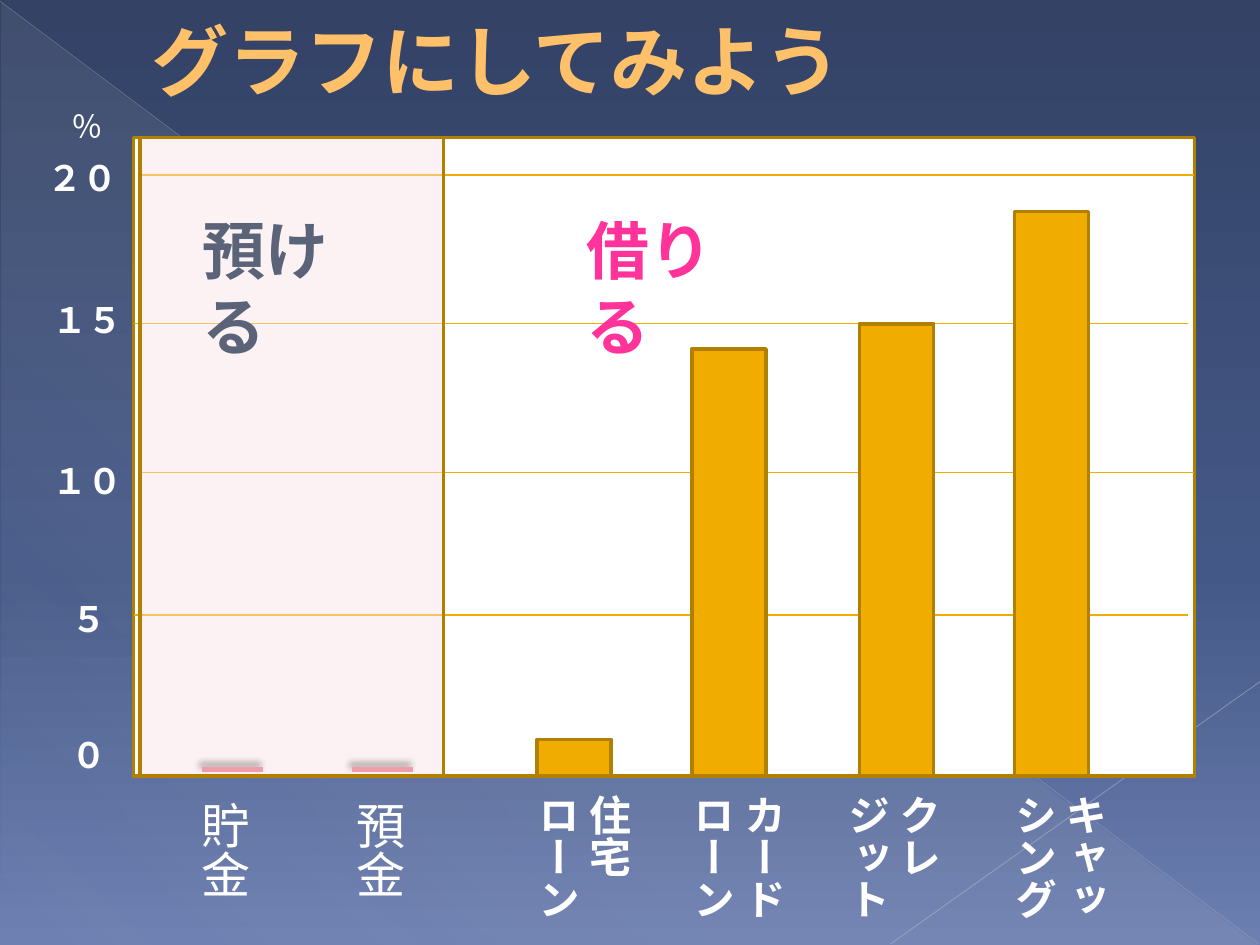
from lxml.etree import SubElement
from pptx import Presentation
from pptx.dml.color import RGBColor
from pptx.enum.shapes import MSO_CONNECTOR, MSO_SHAPE
from pptx.enum.text import MSO_ANCHOR, MSO_AUTO_SIZE, PP_ALIGN
from pptx.oxml.ns import qn
from pptx.util import Inches, Pt

COLORS = {
    "sky": "334265", "mid": "445887", "low": "6C7FB1", "haze": "D4D4D6",
    "ray": "B9BDC8", "ray2": "C1C4CE", "title": "FFC06A", "white": "FFFFFF",
    "gold": "F0AD00", "edge": "B28000", "rose": "E66C7D", "blush": "FAE2E5",
    "slate": "5A6378", "pink": "FF3399", "black": "000000",
}
JP = "Noto Sans CJK JP"
LATIN = "Quicksand"


def rgb(name):
    return RGBColor.from_string(COLORS[name])


def add_color(parent, name, alpha=100):
    node = SubElement(parent, qn("a:srgbClr"), val=COLORS[name])
    if alpha < 100:
        SubElement(node, qn("a:alpha"), val=str(alpha * 1000))


def set_alpha(shape, alpha):
    """Set the opacity of the first solid colour of a shape, in percent."""
    node = next(shape._element.spPr.iter(qn("a:srgbClr")))
    SubElement(node, qn("a:alpha"), val=str(alpha * 1000))


def set_grad(props, stops, angle):
    """Swap the solid fill in props for a gradient of (place, colour, alpha)."""
    old = props.find(qn("a:solidFill"))
    grad = SubElement(props, qn("a:gradFill"), rotWithShape="1")
    props.replace(old, grad)
    items = SubElement(grad, qn("a:gsLst"))
    for place, name, alpha in stops:
        stop = SubElement(items, qn("a:gs"), pos=str(place * 1000))
        add_color(stop, name, alpha)
    SubElement(grad, qn("a:lin"), ang=str(angle * 60000), scaled="0")


def add_box(slide, box, fill, edge="edge", kind=MSO_SHAPE.RECTANGLE):
    shape = slide.shapes.add_shape(kind, *map(Inches, box))
    shape.shadow.inherit = False
    shape.fill.solid()
    shape.fill.fore_color.rgb = rgb(fill)
    if edge:
        shape.line.color.rgb = rgb(edge)
        shape.line.width = Pt(2)
    else:
        shape.line.fill.background()
    return shape


def add_line(slide, ends, color, width, alpha=100, shade=False):
    line = slide.shapes.add_connector(MSO_CONNECTOR.STRAIGHT, *map(Inches, ends))
    line.line.color.rgb = rgb(color)
    line.line.width = Pt(width)
    if alpha < 100:
        set_alpha(line, alpha)
    effects = SubElement(line._element.spPr, qn("a:effectLst"))
    if shade:
        shadow = SubElement(effects, qn("a:outerShdw"), blurRad=str(Pt(4)),
                            dist=str(Pt(3)), dir=str(245 * 60000),
                            algn="ctr", rotWithShape="0")
        add_color(shadow, "black", 60)


def write(frame, text, size, color="white", bold=False, font=LATIN):
    for i, part in enumerate(text.split("\n")):
        para = frame.add_paragraph() if i else frame.paragraphs[0]
        run = para.add_run()
        run.text = part
        run.font.size = Pt(size)
        run.font.bold = bold
        run.font.name = font
        run.font.color.rgb = rgb(color)
        SubElement(run._r.get_or_add_rPr(), qn("a:ea"), typeface=font)


def add_text(slide, box, text, size, wrap=False, upright=False, **style):
    frame = slide.shapes.add_textbox(*map(Inches, box)).text_frame
    frame.word_wrap = wrap
    frame.auto_size = MSO_AUTO_SIZE.SHAPE_TO_FIT_TEXT
    if upright:
        frame._txBody.bodyPr.set("vert", "eaVert")
    write(frame, text, size, **style)


def add_back(slide):
    fill = slide.background.fill
    fill.solid()
    fill.fore_color.rgb = rgb("sky")
    props = slide._element.cSld.find(qn("p:bg")).find(qn("p:bgPr"))
    set_grad(props, [(0, "sky", 100), (60, "mid", 100), (100, "low", 100)], 90)
    haze = add_box(slide, (0.01, 0.02, 9.98, 7.48), "haze", None,
                   MSO_SHAPE.RIGHT_TRIANGLE)
    set_grad(haze._element.spPr,
             [(0, "haze", 10), (70, "haze", 8), (100, "haze", 1)], 133)
    add_line(slide, (0, 0.01, 9.99, 7.49), "ray", 0.39, alpha=35)
    add_line(slide, (10, 5.41, 7.07, 7.49), "ray2", 0.47, alpha=45)


def add_title(slide, box, text):
    title = slide.shapes.title
    title.left, title.top, title.width, title.height = map(Inches, box)
    slide.shapes._spTree.append(title._element)  # in front of the backdrop
    frame = title.text_frame
    frame.vertical_anchor = MSO_ANCHOR.MIDDLE
    frame.auto_size = MSO_AUTO_SIZE.NONE
    write(frame, text, 44, color="title", bold=True, font=JP)
    para = frame.paragraphs[0]
    para.alignment = PP_ALIGN.LEFT
    para._p.get_or_add_pPr().set("marL", str(Inches(0.53)))


def add_plot(slide, box):
    left, top, width, _ = box
    add_box(slide, box, "white")
    # Each gridline: distance below the top edge, start offset
    for drop, shift in [(0.3, 0.05), (1.48, 0), (2.66, 0.05), (3.79, 0)]:
        x, y = left + shift, top + drop
        add_line(slide, (x, y, x + width - 0.05, y), "gold", 0.75)


def add_axis(slide, left, top):
    add_text(slide, (left + 0.19, top, 0.45, 0.4), "％", 18)
    ticks = [("２０", 0, 0.39), ("１５", 0.04, 1.52), ("１０", 0.04, 2.8),
             ("５", 0.19, 3.89), ("０", 0.19, 4.97)]
    for text, dx, dy in ticks:
        box = (left + dx, top + dy, 0.76 if len(text) > 1 else 0.48, 0.44)
        add_text(slide, box, text, 20, bold=True)


def add_save(slide, box):
    """Savings side: flat marks, names, tinted panel and heading."""
    left, top, width, height = box
    base = top + height
    for text, mark, name in [("貯金", 0.49, 0.28), ("預金", 1.68, 1.51)]:
        x, y = left + mark, base - 0.05
        add_line(slide, (x, y, x + 0.49, y), "rose", 3, shade=True)
        add_text(slide, (left + name, base + 0.1, 0.67, 0.89), text, 28,
                 upright=True)
    set_alpha(add_box(slide, box, "blush"), 43)
    add_text(slide, (left + 0.4, top + 0.54, 1.59, 0.71), "預ける", 36,
             wrap=True, color="slate", bold=True, font=JP)


def add_loans(slide, box):
    """Loan side: bars, names and heading."""
    left, top, _, height = box
    base = top + height
    bars = [("住宅\nローン", 0.74, 0.29, 0.25, 1.31),
            ("カード\nローン", 1.97, 3.39, 1.78, 1.01),
            ("クレ\nジット", 3.3, 3.59, 3.01, 1.01),
            ("キャッ\nシング", 4.53, 4.48, 4.33, 1.01)]
    for text, dx, tall, name, wide in bars:
        add_box(slide, (left + dx, base - tall, 0.59, tall), "gold")
        add_text(slide, (left + name, base + 0.05, wide, 1.09), text, 24,
                 upright=True, bold=True)
    add_text(slide, (left + 1.04, top + 0.54, 1.5, 0.71), "借りる", 36,
             wrap=True, color="pink", bold=True, font=JP)


def main():
    deck = Presentation()
    deck.slide_width, deck.slide_height = Inches(10), Inches(7.5)
    slide = deck.slides.add_slide(deck.slide_layouts[5])
    add_back(slide)
    add_title(slide, (0.57, 0, 6.62, 0.95), "グラフにしてみよう")
    add_plot(slide, (1.06, 1.09, 8.42, 5.07))
    add_axis(slide, 0.28, 0.8)
    add_save(slide, (1.11, 1.09, 2.41, 5.07))
    add_loans(slide, (3.52, 1.09, 5.96, 5.07))
    deck.save("out.pptx")


if __name__ == "__main__":
    main()
